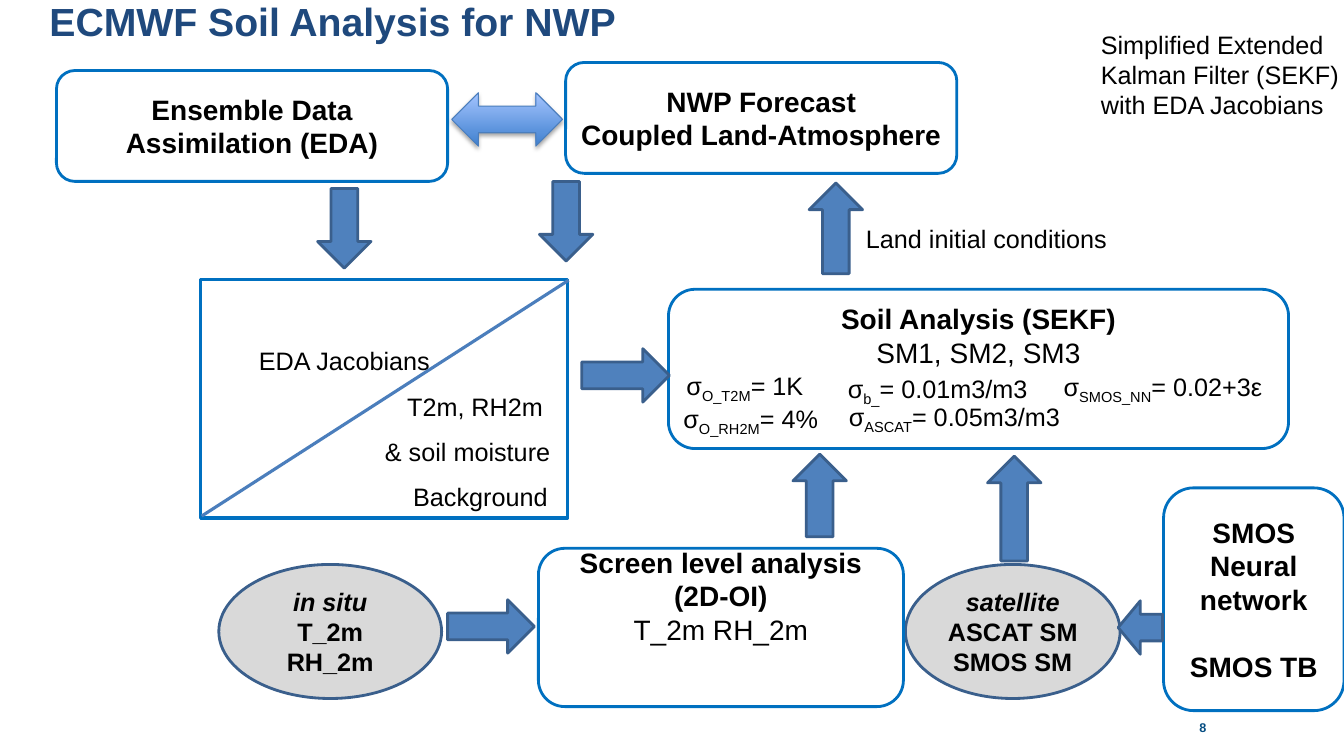
from lxml import etree
from pptx import Presentation
from pptx.dml.color import RGBColor
from pptx.enum.shapes import MSO_CONNECTOR, MSO_SHAPE as Shape
from pptx.enum.text import MSO_ANCHOR as Anchor, PP_ALIGN as Align
from pptx.oxml.ns import qn
from pptx.util import Inches, Pt

COLORS = {
    "title": "1F497D", "text": "000000", "number": "064E83", "white": "FFFFFF",
    "frame": "0070C0", "source": "D9D9D9", "arrow": "4F81BD", "outline": "3A5F8C",
    "diagonal": "4B7EBC", "shade": "3F80CE", "light": "A4C4FF",
}


def color(name):
    return RGBColor.from_string(COLORS[name])


class Diagram:
    """Holds the style and the current slide."""
    font = "Arial"

    def __init__(self, deck):
        self.slide = deck.slides.add_slide(deck.slide_layouts[5])
        self.shapes = self.slide.shapes

    def style_para(self, para, size, bold=False, italic=False, ink="text", align=Align.LEFT):
        para.alignment = align
        for span in para.runs:
            font = span.font
            font.name, font.size = self.font, Pt(size)
            font.bold, font.italic = bold, italic
            font.color.rgb = color(ink)

    def fill_text(self, box, lines, size, align=Align.CENTER, anchor=Anchor.MIDDLE, wrap=True):
        """Each line is a text with the keywords of its format."""
        frame = box.text_frame
        frame.word_wrap, frame.vertical_anchor = wrap, anchor
        frame.text = "\n".join(text for text, _ in lines)
        for para, (_, style) in zip(frame.paragraphs, lines):
            self.style_para(para, size, align=align, **style)
        return frame

    def title(self, text, left, top, width, height):
        box = self.shapes.title
        box.left, box.top = Inches(left), Inches(top)
        box.width, box.height = Inches(width), Inches(height)
        frame = self.fill_text(box, [(text, {"bold": True, "ink": "title"})], 28,
                               Align.LEFT, Anchor.TOP, wrap=False)
        frame.paragraphs[0].line_spacing = Pt(28)

    def shape(self, kind, place, fill, line, weight=2, rotation=0):
        item = self.shapes.add_shape(kind, *map(Inches, place))
        item.shadow.inherit = False
        item.rotation = rotation
        if fill:
            item.fill.solid()
            item.fill.fore_color.rgb = color(fill)
        else:
            item.fill.background()
        item.line.color.rgb = color(line)
        item.line.width = Pt(weight)
        return item

    def step(self, place, lines, fill="white", bottom=0.05):
        box = self.shape(Shape.ROUNDED_RECTANGLE, place, fill, "frame")
        frame = self.fill_text(box, lines, 20)
        frame.margin_bottom = Inches(bottom)
        return frame

    def source(self, place, lines):
        self.fill_text(self.shape(Shape.OVAL, place, "source", "outline"), lines, 18)

    def arrow(self, left, top, length, rotation=0):
        self.shape(Shape.RIGHT_ARROW, (left, top, length, 0.53), "arrow", "outline",
                   rotation=rotation)

    def exchange(self, place):
        item = self.shape(Shape.LEFT_RIGHT_ARROW, place, "arrow", "diagonal", 0.75)
        item.fill.gradient()
        item.fill.gradient_angle = 90
        for stop, name in zip(item.fill.gradient_stops, ("shade", "light")):
            stop.color.rgb = color(name)
        effects = item._element.spPr.find(qn("a:effectLst"))
        shadow = etree.SubElement(effects, qn("a:outerShdw"), blurRad="40000",
                                  dist="23000", dir="5400000", rotWithShape="0")
        black = etree.SubElement(shadow, qn("a:srgbClr"), val=COLORS["text"])
        etree.SubElement(black, qn("a:alpha"), val="35000")

    def line(self, start, end):
        item = self.shapes.add_connector(MSO_CONNECTOR.STRAIGHT, *map(Inches, start + end))
        item.line.color.rgb = color("diagonal")
        item.line.width = Pt(2.25)
        etree.SubElement(item._element.spPr, qn("a:effectLst"))

    def label(self, place, lines, size=18, wrap=False, align=Align.LEFT, anchor=Anchor.TOP):
        box = self.shapes.add_textbox(*map(Inches, place))
        return self.fill_text(box, lines, size, align, anchor, wrap)

    def sigma(self, left, top, width, index, value):
        para = self.label((left, top, width, 0.4), [("σ", {})]).paragraphs[0]
        for text in (index, value):
            para.add_run().text = text
        self.style_para(para, 18)
        para.runs[1]._r.get_or_add_rPr().set("baseline", "-25000")


def main():
    deck = Presentation()
    deck.slide_width, deck.slide_height = Inches(13.33), Inches(7.5)
    page = Diagram(deck)
    plain, bold = {}, {"bold": True}
    heading = {"bold": True, "italic": True}

    page.title("ECMWF Soil Analysis for NWP", 0.39, 0, 5.98, 0.49)

    # Jacobians and background, split by a diagonal
    split = page.shape(Shape.RECTANGLE, (1.99, 2.77, 3.64, 2.37), None, "frame", 2.25)
    indents = {"EDA Jacobians": 0.48, "T2m, RH2m": 1.95,
               "& soil moisture": 1.73, "Background": 2.01}
    frame = page.fill_text(split, [(text, plain) for text in indents], 18,
                           Align.LEFT, Anchor.TOP)
    frame.margin_top = Inches(0.51)
    for para, indent in zip(frame.paragraphs, indents.values()):
        para.line_spacing = 1.5
        para._p.get_or_add_pPr().set("marL", str(Inches(indent)))
    page.line((2, 5.12), (5.64, 2.78))

    # Observations
    page.source((2.17, 5.6, 2.21, 1.33), [("in situ", heading), ("T_2m RH_2m", bold)])
    page.source((8.98, 5.6, 2.13, 1.33),
                [("satellite", heading), ("ASCAT SM", bold), ("SMOS SM", bold)])

    # Processing steps
    page.step((0.56, 0.7, 3.88, 1.1), [("Ensemble Data Assimilation (EDA)", bold)])
    page.step((5.61, 0.62, 3.88, 1.1),
              [("NWP Forecast", bold), ("Coupled Land-Atmosphere", bold)])
    page.step((6.63, 2.87, 6.15, 1.58),
              [("Soil Analysis (SEKF)", bold), ("SM1, SM2, SM3", plain)], bottom=0.72)
    page.step((5.34, 5.44, 3.62, 1.57),
              [("Screen level analysis (2D-OI)", bold), ("T_2m RH_2m", plain)], bottom=0.68)
    network = page.step((11.54, 4.84, 1.79, 2.21),
                        [("SMOS Neural network", bold), ("SMOS TB", bold)], fill=None)
    network.paragraphs[1].space_before = Pt(24)

    # Arrows: left, top, length, rotation
    for arrow in ((4.44, 5.95, 0.86), (5.77, 3.46, 0.87), (11.09, 5.96, 0.44, 180),
                  (3.02, 2, 0.79, 90), (5.22, 1.93, 0.79, 90),
                  (7.84, 2, 0.9, 270), (7.72, 4.65, 0.82, 270), (9.54, 4.78, 1.04, 270)):
        page.arrow(*arrow)
    page.exchange((4.48, 0.92, 1.1, 0.53))

    # Error settings of the soil analysis
    for setting in ((6.71, 3.62, 1.45, "O_T2M", "= 1K"),
                    (6.68, 3.95, 1.64, "O_RH2M", "= 4%"),
                    (8.31, 3.65, 2.02, "b_", "= 0.01m3/m3"),
                    (8.32, 3.93, 2.38, "ASCAT", "= 0.05m3/m3"),
                    (10.45, 3.63, 2.48, "SMOS_NN", "= 0.02+3ε")):
        page.sigma(*setting)

    # Notes beside the diagram and page number
    page.label((8.49, 2.17, 2.63, 0.4), [("Land initial conditions", plain)])
    note = page.label((10.82, 0.24, 2.5, 1.01),
                      [("Simplified Extended Kalman Filter (SEKF)", plain),
                       ("with EDA Jacobians", plain)], wrap=True)
    note.margin_right = 0
    number = page.label((10.75, 7.05, 2.36, 0.24), [("8", {"bold": True, "ink": "number"})],
                        size=9, wrap=True, align=Align.CENTER, anchor=Anchor.BOTTOM)
    number.margin_left = number.margin_right = number.margin_top = number.margin_bottom = 0

    deck.save("out.pptx")


if __name__ == "__main__":
    main()
